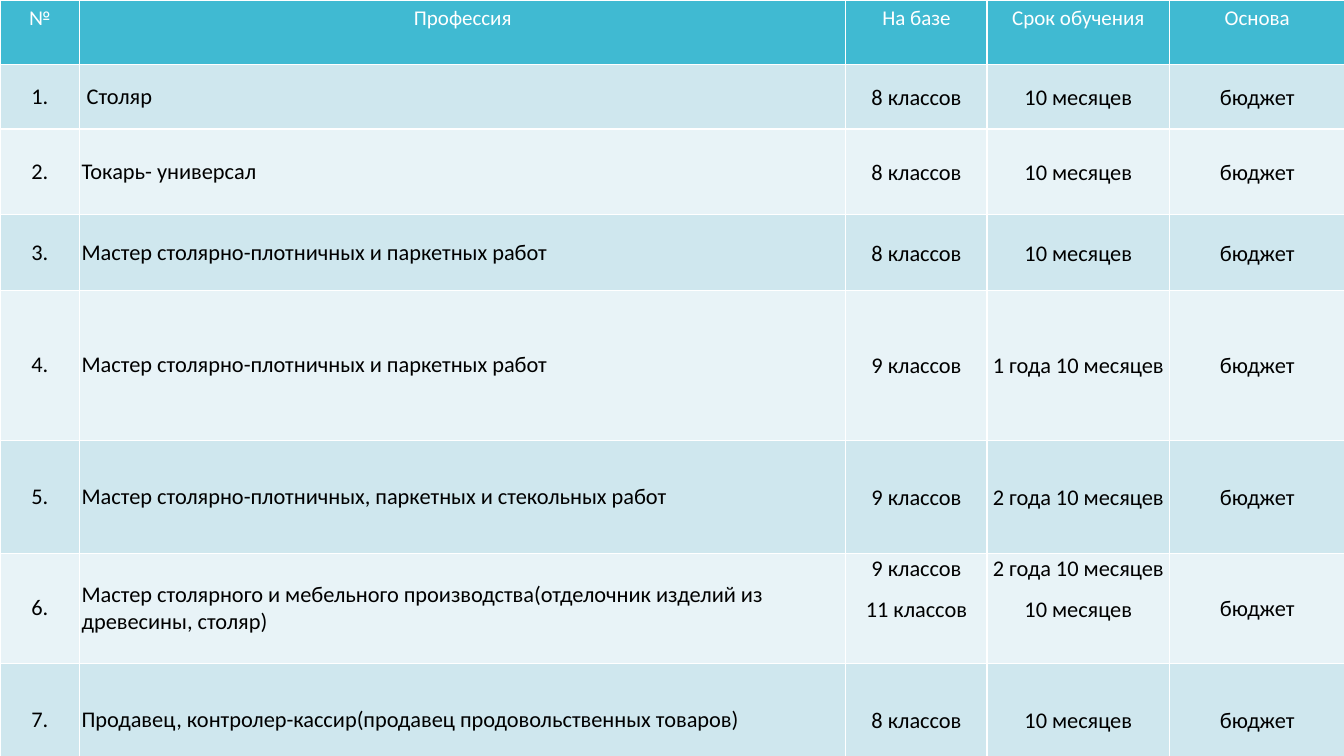
from dataclasses import dataclass

from lxml import etree
from pptx import Presentation
from pptx.dml.color import RGBColor
from pptx.enum.text import MSO_ANCHOR, PP_ALIGN
from pptx.oxml.ns import qn
from pptx.table import _Cell
from pptx.util import Inches, Pt

LEFT, CENTER = PP_ALIGN.LEFT, PP_ALIGN.CENTER
TOP, MIDDLE = MSO_ANCHOR.TOP, MSO_ANCHOR.MIDDLE


@dataclass(frozen=True)
class Theme:
    font: str = "Calibri"
    header_size: float = 15
    body_size: float = 16
    border_width: float = 1
    header_fill: str = "40BAD2"
    odd_fill: str = "CFE7EE"
    even_fill: str = "E8F3F7"
    header_text: str = "FFFFFF"
    body_text: str = "000000"
    border: str = "FFFFFF"


@dataclass(frozen=True)
class Column:
    title: str
    width: float
    align: PP_ALIGN = CENTER
    inset_x: float = 0
    inset_y: float = 0
    line_spacing: float = 1.07
    space_after: float = 8


@dataclass(frozen=True)
class Course:
    height: float
    profession: str
    base: str
    term: str
    funding: str = "бюджет"


THEME = Theme()
SLIDE_W, SLIDE_H = 13.33, 7.5
HEADER_HEIGHT = 0.64
COLUMNS = [
    Column("№", 0.79, inset_x=0.1, inset_y=0.05, line_spacing=1, space_after=0),
    Column("Профессия", 7.6, LEFT, 0.02, 0.02, line_spacing=1, space_after=0),
    Column("На базе", 1.4),
    Column("Срок обучения", 1.81),
    Column("Основа", 1.74),
]
COURSES = [
    Course(0.64, " Столяр", "8 классов", "10 месяцев"),
    Course(0.85, "Токарь- универсал", "8 классов", "10 месяцев"),
    Course(0.75, "Мастер столярно-плотничных и паркетных работ",
           "8 классов", "10 месяцев"),
    Course(1.49, "Мастер столярно-плотничных и паркетных работ",
           "9 классов", "1 года 10 месяцев"),
    Course(1.12, "Мастер столярно-плотничных, паркетных и стекольных работ",
           "9 классов", "2 года 10 месяцев"),
    Course(1.09, "Мастер столярного и мебельного производства"
           "(отделочник изделий из древесины, столяр)",
           "9 классов\n11 классов", "2 года 10 месяцев\n10 месяцев"),
    Course(1.12, "Продавец, контролер-кассир(продавец продовольственных товаров)",
           "8 классов", "10 месяцев"),
]


def set_borders(cell: _Cell) -> None:
    tc_pr = cell._tc.get_or_add_tcPr()
    for side in ("lnL", "lnR", "lnT", "lnB"):
        ln = etree.SubElement(tc_pr, qn(f"a:{side}"), w=str(Pt(THEME.border_width)))
        fill = etree.SubElement(ln, qn("a:solidFill"))
        etree.SubElement(fill, qn("a:srgbClr"), val=THEME.border)


def write_cell(cell: _Cell, text: str, *, fill: str, color: str, size: float,
               align: PP_ALIGN = CENTER, anchor: MSO_ANCHOR = MIDDLE,
               inset_x: float = 0.1, inset_y: float = 0.05,
               line_spacing: float = 1, space_after: float = 0) -> None:
    set_borders(cell)
    cell.fill.solid()
    cell.fill.fore_color.rgb = RGBColor.from_string(fill)
    cell.vertical_anchor = anchor
    cell.margin_left = cell.margin_right = Inches(inset_x)
    cell.margin_top = cell.margin_bottom = Inches(inset_y)
    tf = cell.text_frame
    tf.text = text
    for p in tf.paragraphs:
        p.alignment = align
        p.line_spacing = line_spacing
        p.space_after = Pt(space_after)
        for r in p.runs:
            r.font.name = THEME.font
            r.font.size = Pt(size)
            r.font.bold = False
            r.font.color.rgb = RGBColor.from_string(color)


def main() -> None:
    prs = Presentation()
    prs.slide_width, prs.slide_height = Inches(SLIDE_W), Inches(SLIDE_H)
    s = prs.slides.add_slide(prs.slide_layouts[6])
    heights = [HEADER_HEIGHT] + [course.height for course in COURSES]
    table = s.shapes.add_table(len(heights), len(COLUMNS), 0, 0, prs.slide_width,
                               Inches(sum(heights))).table
    for row, height in zip(table.rows, heights):
        row.height = Inches(height)
    for i, column in enumerate(COLUMNS):
        table.columns[i].width = Inches(column.width)
        write_cell(table.cell(0, i), column.title, fill=THEME.header_fill,
                   color=THEME.header_text, size=THEME.header_size, anchor=TOP)
    for n, course in enumerate(COURSES, 1):
        texts = (f"{n}.", course.profession, course.base, course.term, course.funding)
        for i, (column, text) in enumerate(zip(COLUMNS, texts)):
            write_cell(table.cell(n, i), text,
                       fill=THEME.odd_fill if n % 2 else THEME.even_fill,
                       color=THEME.body_text, size=THEME.body_size,
                       align=column.align, anchor=TOP if "\n" in text else MIDDLE,
                       inset_x=column.inset_x, inset_y=column.inset_y,
                       line_spacing=column.line_spacing,
                       space_after=column.space_after)
    prs.save("out.pptx")


if __name__ == "__main__":
    main()
